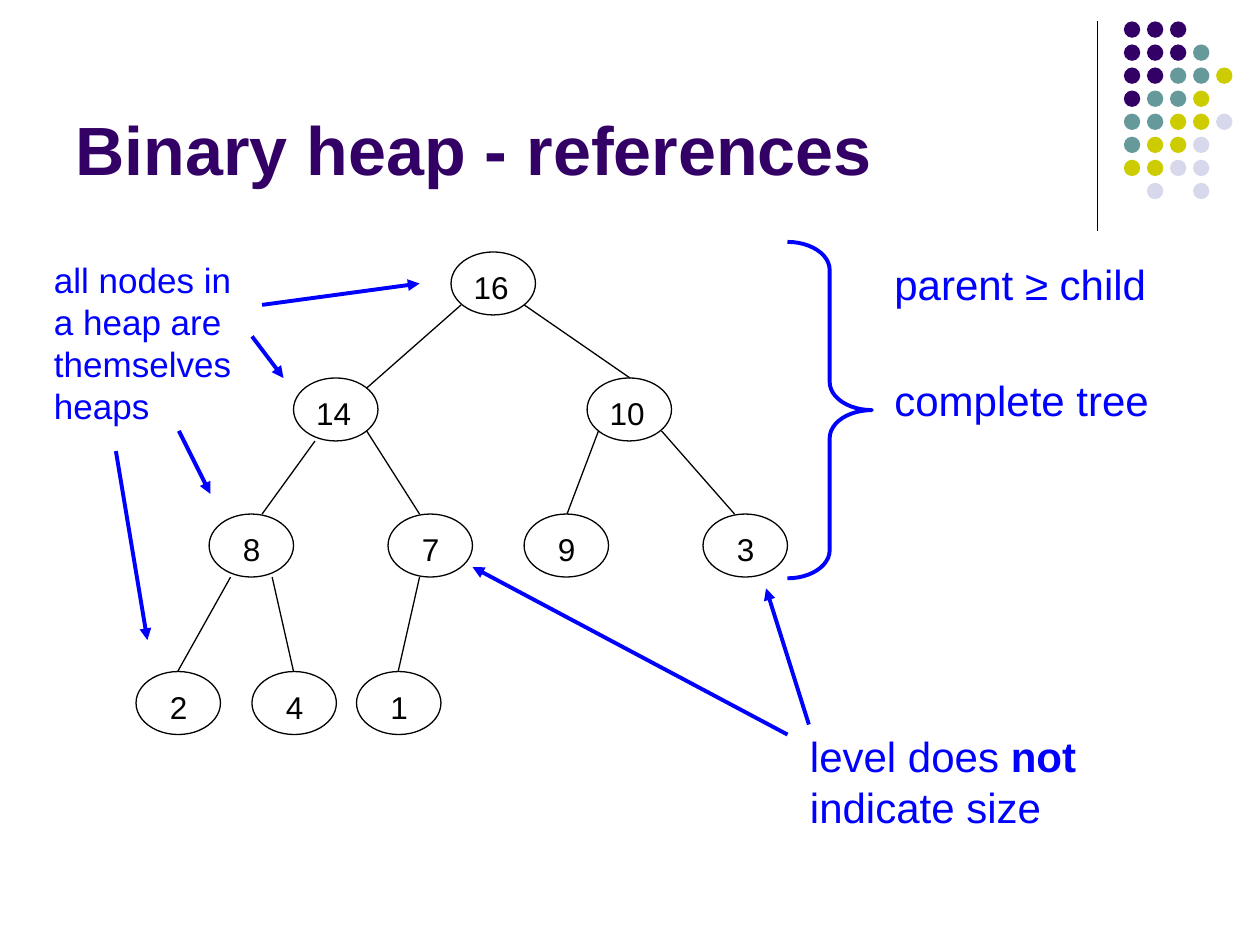
from dataclasses import dataclass

from pptx import Presentation
from pptx.dml.color import RGBColor
from pptx.enum.shapes import MSO_CONNECTOR, MSO_SHAPE
from pptx.enum.text import MSO_ANCHOR, PP_ALIGN
from pptx.oxml.ns import qn
from pptx.util import Inches, Pt
from lxml.etree import SubElement


@dataclass(frozen=True)
class Theme:
    font: str = "Arial"
    ink: str = "000000"
    note: str = "0000FF"
    plum: str = "330066"
    teal: str = "669999"
    lime: str = "CCCC00"
    pale: str = "D8D8EC"
    title: float = 39
    large: float = 24
    small: float = 20
    value: float = 18
    thin: float = 0.75
    thick: float = 2.25


T = Theme()

DOTS = ("PPP..", "PPPT.", "PPTTY", "PTTY.", "TTYYL", "TYYL.", "YYLL.", ".L.L.")
HUES = {"P": T.plum, "T": T.teal, "Y": T.lime, "L": T.pale}

# Places in the tree are relative to the corner of its box
NODES = (
    ("16", 2.5, 0), ("14", 1.25, 1), ("10", 3.58, 1),
    ("8", 0.58, 2.08), ("7", 2, 2.08), ("9", 3.08, 2.08), ("3", 4.5, 2.08),
    ("2", 0, 3.33), ("4", 0.92, 3.33), ("1", 1.75, 3.33),
)
EDGES = (
    (2.58, 0.42, 1.83, 1.08), (3.08, 0.42, 3.92, 1),
    (1.42, 1.5, 1, 2.08), (1.83, 1.42, 2.25, 2.08),
    (3.67, 1.42, 3.42, 2.08), (4.17, 1.42, 4.75, 2.08),
    (0.75, 2.58, 0.33, 3.33), (1.08, 2.58, 1.25, 3.33),
    (2.25, 2.58, 2.08, 3.33),
)


def style(item, **form):
    for name, value in form.items():
        setattr(item, name, value)


def rgb(code):
    return RGBColor.from_string(code)


def write(para, text, size, color, bold=False):
    run = para.add_run()
    run.text = text
    style(run.font, name=T.font, size=Pt(size), bold=bold)
    run.font.color.rgb = rgb(color)


def label(slide, box, parts, size, color):
    frame = slide.shapes.add_textbox(*map(Inches, box)).text_frame
    frame.word_wrap = True
    for text, bold in parts:
        write(frame.paragraphs[0], text, size, color, bold)


def shape(slide, kind, box, fill=None, line=None, width=T.thin):
    item = slide.shapes.add_shape(kind, *map(Inches, box))
    item.shadow.inherit = False
    if fill:
        item.fill.solid()
        item.fill.fore_color.rgb = rgb(fill)
    else:
        item.fill.background()
    if line:
        item.line.color.rgb = rgb(line)
        item.line.width = Pt(width)
    else:
        item.line.fill.background()
    return item


def link(slide, ends, color=T.ink, width=T.thin, arrow=False):
    item = slide.shapes.add_connector(MSO_CONNECTOR.STRAIGHT, *map(Inches, ends))
    item.line.color.rgb = rgb(color)
    item.line.width = Pt(width)
    if arrow:
        SubElement(item.line._get_or_add_ln(), qn("a:tailEnd"), type="triangle")
    SubElement(item._element.spPr, qn("a:effectLst"))


def corner(slide, box):
    """Rule and dot grid at the top right."""
    left, top, width, height = box
    link(slide, (left, top, left, top + height))
    size, step = 0.13, 0.183
    for row, marks in enumerate(DOTS):
        for col, mark in enumerate(marks):
            if mark in HUES:
                spot = (left + 0.21 + col * step, top + row * step, size, size)
                shape(slide, MSO_SHAPE.OVAL, spot, HUES[mark])


def heading(slide, box, text):
    title = slide.shapes.title
    style(title, **dict(zip(("left", "top", "width", "height"), map(Inches, box))))
    style(title.text_frame, vertical_anchor=MSO_ANCHOR.BOTTOM, word_wrap=True)
    para = title.text_frame.paragraphs[0]
    para.alignment = PP_ALIGN.LEFT
    write(para, text, T.title, T.plum, True)


def tree(slide, box):
    """Heap nodes and the edges between them."""
    left, top = box[:2]
    for text, x, y in NODES:
        x, y = left + x, top + y
        shape(slide, MSO_SHAPE.OVAL, (x, y, 0.67, 0.5), line=T.ink)
        inset = 0.08 if len(text) > 1 else 0.17
        label(slide, (x + inset, y + 0.08, 0.58, 0.4), [(text, False)],
              T.value, T.ink)
    for x1, y1, x2, y2 in EDGES:
        link(slide, (left + x1, top + y1, left + x2, top + y2))


def remark(slide, box, parts, size, arrows=()):
    """Blue note; its arrows are relative to the corner of the box."""
    left, top = box[:2]
    label(slide, box, parts, size, T.note)
    for x1, y1, x2, y2 in arrows:
        link(slide, (left + x1, top + y1, left + x2, top + y2),
             T.note, T.thick, True)


def rules(slide, box):
    """Brace with the two heap properties beside it."""
    left, top, width, height = box
    brace = shape(slide, MSO_SHAPE.RIGHT_BRACE, (left, top, 0.67, height),
                  line=T.note, width=T.thick)
    brace.adjustments[0] = 0.333
    brace.adjustments[1] = 0.5
    for text, drop in (("parent ≥ child", 0.08), ("complete tree", 1)):
        remark(slide, (left + 0.75, top + drop, width - 0.75, 0.5),
               [(text, False)], T.large)


def main():
    deck = Presentation()
    style(deck, slide_width=Inches(10), slide_height=Inches(7.5))
    slide = deck.slides.add_slide(deck.slide_layouts[5])

    corner(slide, (8.71, 0.17, 1.07, 1.66))
    heading(slide, (0.5, 0.13, 8.25, 1.42), "Binary heap - references")
    tree(slide, (1.08, 2, 5.17, 3.83))
    rules(slide, (6.25, 1.92, 3.42, 2.67))
    remark(slide, (6.33, 5.75, 3.08, 0.9),
           [("level does ", False), ("not", True), (" indicate size", False)],
           T.large, ((0.09, 0, -0.25, -1.08), (-0.08, 0.08, -2.58, -1.25)))
    remark(slide, (0.33, 2, 1.67, 1.43),
           [("all nodes in a heap are themselves heaps", False)], T.small,
           ((1.75, 0.42, 3, 0.25), (1.67, 0.67, 1.92, 1),
            (1.09, 1.42, 1.34, 1.92), (0.59, 1.58, 0.84, 3.08)))
    deck.save("out.pptx")


if __name__ == "__main__":
    main()
